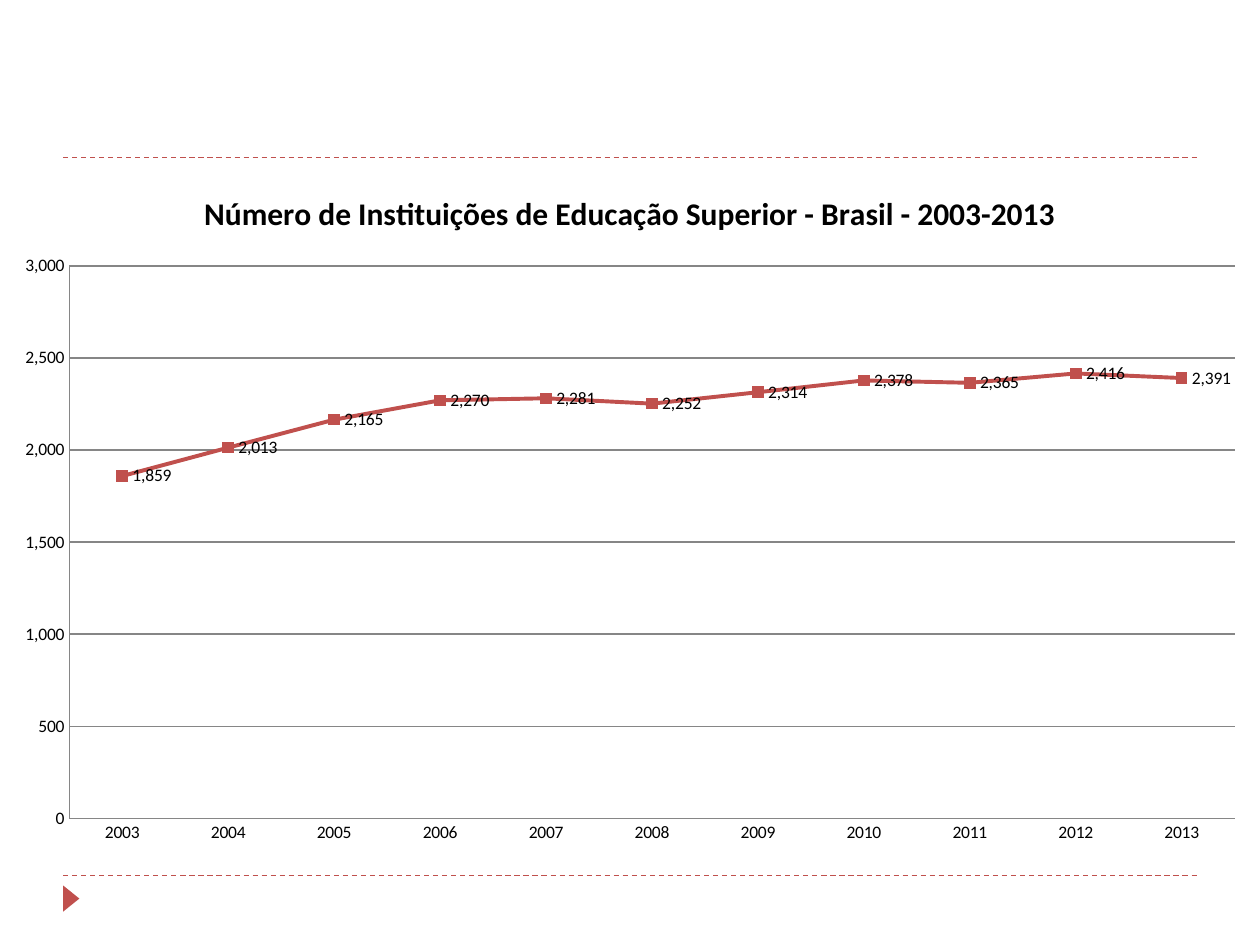
from dataclasses import dataclass

from lxml.etree import SubElement
from pptx import Presentation
from pptx.chart.data import CategoryChartData
from pptx.dml.color import RGBColor
from pptx.enum.chart import (XL_CHART_TYPE, XL_LABEL_POSITION,
                             XL_MARKER_STYLE, XL_TICK_MARK)
from pptx.enum.dml import MSO_LINE
from pptx.enum.shapes import MSO_CONNECTOR, MSO_SHAPE
from pptx.oxml.ns import qn
from pptx.util import Cm, Pt


@dataclass(frozen=True)
class Theme:
    accent: RGBColor = RGBColor(0xC0, 0x50, 0x4D)
    text: RGBColor = RGBColor(0, 0, 0)
    grid: RGBColor = RGBColor(0x86, 0x86, 0x86)
    font: str = "Calibri"
    label_size: Pt = Pt(10)
    title_size: Pt = Pt(18)
    rule_width: Pt = Pt(0.75)
    series_width: Pt = Pt(2.25)


@dataclass(frozen=True)
class Box:
    left: float
    top: float
    width: float
    height: float


THEME = Theme()
HEADING = "Número de Instituições de Educação Superior - Brasil - 2003-2013"
YEARS = [str(year) for year in range(2003, 2014)]
INSTITUTIONS = [1859, 2013, 2165, 2270, 2281, 2252, 2314, 2378, 2365, 2416, 2391]
NUMBER_FORMAT = {"number_format": "#,##0", "number_format_is_linked": False}
PLOT_FRACTIONS = {"x": 0.055, "y": 0.146, "w": 0.925, "h": 0.8}


def apply(target, formats):
    for attribute, value in formats.items():
        setattr(target, attribute, value)


def style_font(font, size, bold=False):
    apply(font, {"name": THEME.font, "size": size, "bold": bold})
    font.color.rgb = THEME.text


def style_line(line, color, width):
    line.color.rgb = color
    line.width = width


def add_frame(slide, box):
    for height in (box.top, box.top + box.height):
        rule = slide.shapes.add_connector(
            MSO_CONNECTOR.STRAIGHT, Cm(box.left), Cm(height),
            Cm(box.left + box.width), Cm(height))
        style_line(rule.line, THEME.accent, THEME.rule_width)
        rule.line.dash_style = MSO_LINE.DASH
        SubElement(rule._element.spPr, qn("a:effectLst"))

    pointer = slide.shapes.add_shape(
        MSO_SHAPE.ISOSCELES_TRIANGLE, Cm(box.left - 0.1),
        Cm(box.top + box.height + 0.3), Cm(0.53), Cm(0.33))
    pointer.rotation = 90
    pointer.shadow.inherit = False
    pointer.fill.solid()
    pointer.fill.fore_color.rgb = THEME.accent
    pointer.line.fill.background()


def fix_plot_area(chart):
    plot_area = chart._chartSpace.chart.plotArea
    for automatic in plot_area.findall(qn("c:layout")):
        plot_area.remove(automatic)
    layout = SubElement(plot_area, qn("c:layout"))
    plot_area.insert(0, layout)
    manual = SubElement(layout, qn("c:manualLayout"))
    settings = {"layoutTarget": "inner", "xMode": "edge", "yMode": "edge",
                **PLOT_FRACTIONS}
    for tag, value in settings.items():
        SubElement(manual, qn(f"c:{tag}")).set("val", str(value))


def style_axes(chart):
    for axis in (chart.category_axis, chart.value_axis):
        apply(axis, {"major_tick_mark": XL_TICK_MARK.NONE,
                     "minor_tick_mark": XL_TICK_MARK.NONE})
        style_line(axis.format.line, THEME.grid, THEME.rule_width)
        style_font(axis.tick_labels.font, THEME.label_size)
    scale = chart.value_axis
    apply(scale, {"minimum_scale": 0, "maximum_scale": 3000,
                  "major_unit": 500, "has_major_gridlines": True})
    apply(scale.tick_labels, NUMBER_FORMAT)
    style_line(scale.major_gridlines.format.line, THEME.grid, THEME.rule_width)


def style_institutions(institutions):
    institutions.smooth = False
    style_line(institutions.format.line, THEME.accent, THEME.series_width)
    marker = institutions.marker
    apply(marker, {"style": XL_MARKER_STYLE.SQUARE, "size": 6})
    marker.format.fill.solid()
    marker.format.fill.fore_color.rgb = THEME.accent
    marker.format.line.color.rgb = THEME.accent
    labels = institutions.data_labels
    apply(labels, {"show_value": True, "position": XL_LABEL_POSITION.RIGHT,
                   **NUMBER_FORMAT})
    style_font(labels.font, THEME.label_size)


def add_institutions_chart(slide, box):
    enrolment = CategoryChartData(number_format="#,##0")
    enrolment.categories = YEARS
    enrolment.add_series("Series 1", INSTITUTIONS)
    chart = slide.shapes.add_chart(
        XL_CHART_TYPE.LINE_MARKERS, Cm(box.left), Cm(box.top),
        Cm(box.width), Cm(box.height), enrolment).chart
    apply(chart, {"has_legend": False, "has_title": True})
    style_font(chart.font, THEME.label_size)
    heading = chart.chart_title.text_frame
    heading.text = HEADING
    style_font(heading.paragraphs[0].runs[0].font, THEME.title_size, bold=True)
    chart.plots[0].vary_by_categories = False
    style_axes(chart)
    style_institutions(chart.plots[0].series[0])
    fix_plot_area(chart)


def main():
    presentation = Presentation()
    apply(presentation, {"slide_width": Cm(25.4), "slide_height": Cm(19.05)})
    slide = presentation.slides.add_slide(presentation.slide_layouts[6])
    add_frame(slide, Box(1.27, 3.17, 22.86, 14.48))
    add_institutions_chart(slide, Box(0, 3.33, 25.4, 13.92))
    presentation.save("out.pptx")


if __name__ == "__main__":
    main()
